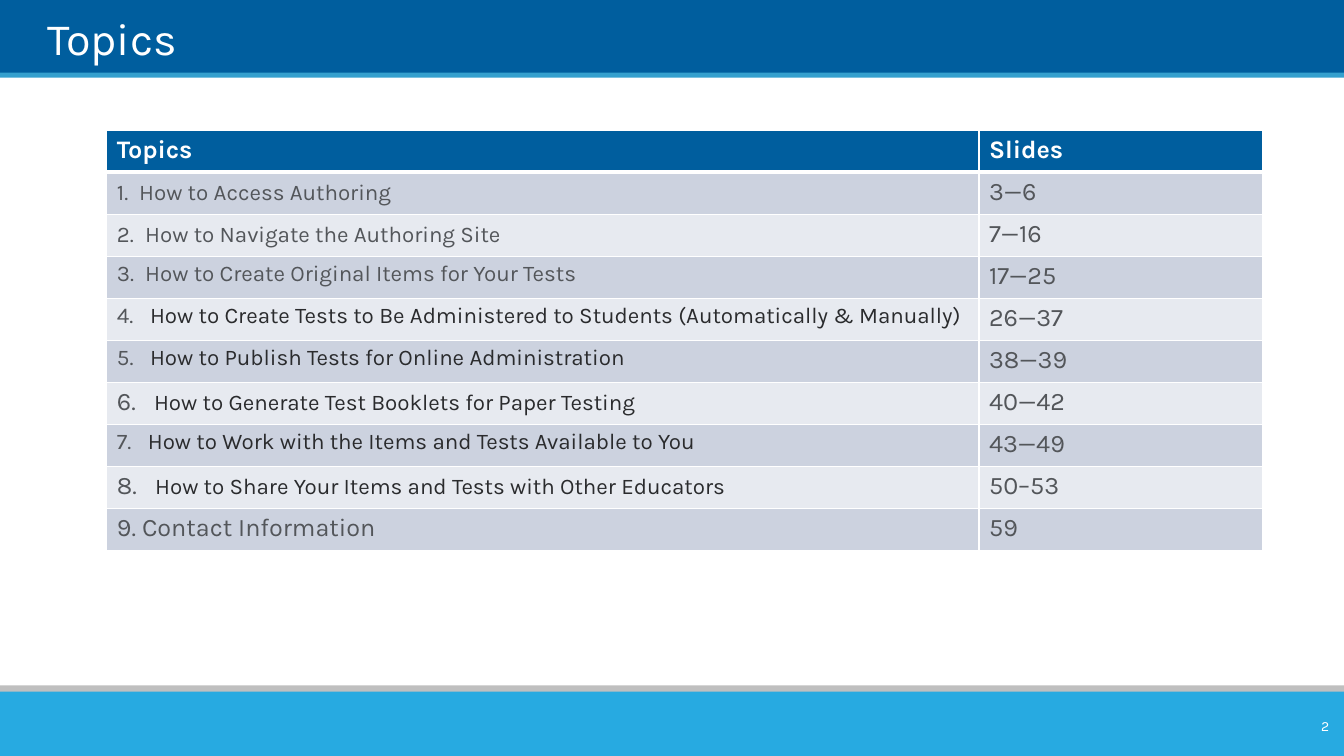
import pptx
import pptx.util
import pptx.dml.color
import pptx.enum.shapes
import pptx.enum.text
import pptx.oxml
import pptx.oxml.ns

WIDTH = pptx.util.Inches(13.33)
HEIGHT = pptx.util.Inches(7.5)
WHITE, GREY, DARK = "FFFFFF", "53565A", "2A2B2D"
NAVY = "005E9E"
STRIPES = ("CCD2DF", "E7EAF0")
MIDDLE = pptx.enum.text.MSO_ANCHOR.MIDDLE
TOP = pptx.enum.text.MSO_ANCHOR.TOP
BOTTOM = pptx.enum.text.MSO_ANCHOR.BOTTOM
LEFT = pptx.enum.text.PP_ALIGN.LEFT
RIGHT = pptx.enum.text.PP_ALIGN.RIGHT

BANDS = [
    (0, 9.87, NAVY),
    (9.6, 0.67, "35A0CE"),
    (90.67, 1.87, "BFBFBF"),
    (91.47, 8.53, "27AAE1"),
]

# number, number size, tab stop, topic, topic size, topic colour, anchor, slides
TOPICS = [
    ("1.", 16, 1.65, "How to Access Authoring", 16, GREY, MIDDLE, "3—6"),
    ("2.", 16, 2.1, "How to Navigate the Authoring Site", 16, GREY, MIDDLE, "7—16"),
    ("3.", 16, 2.1, "How to Create Original Items for Your Tests", 16, GREY, TOP, "17—25"),
    ("4.", 16, 2.46, "How to Create Tests to Be Administered to Students (Automatically & Manually)",
     16, DARK, TOP, "26—37"),
    ("5.", 16, 2.46, "How to Publish Tests for Online Administration", 16, DARK, TOP, "38—39"),
    ("6.", 18, 2.76, "How to Generate Test Booklets for Paper Testing", 16, DARK, TOP, "40—42"),
    ("7.", 16, 2.3, "How to Work with the Items and Tests Available to You", 16, DARK, TOP, "43—49"),
    ("8.", 18, 2.84, "How to Share Your Items and Tests with Other Educators", 16, DARK, TOP, "50–53"),
    ("9.", 18, None, "Contact Information", 18, GREY, TOP, "59"),
]


def across(share):
    return round(WIDTH * share / 100)


def down(share):
    return round(HEIGHT * share / 100)


def place(left, top, width, height):
    return across(left), down(top), across(width), down(height)


def paint(target, colour):
    target.solid()
    target.fore_color.rgb = pptx.dml.color.RGBColor.from_string(colour)


def write(para, text, *, size=18, colour=GREY, bold=False, align=LEFT):
    para.alignment = align
    span = para.add_run()
    span.text = text
    span.font.name = "Karla"
    span.font.size = pptx.util.Pt(size)
    span.font.bold = bold
    paint(span.font.fill, colour)


def add_band(page, top, height, colour):
    band = page.shapes.add_shape(
        pptx.enum.shapes.MSO_SHAPE.RECTANGLE, *place(0, top, 100, height))
    band.shadow.inherit = False
    band.line.fill.background()
    paint(band.fill, colour)


def add_text(page, area, text, *, anchor=MIDDLE, inset=None, **style):
    box = page.shapes.add_textbox(*place(*area))
    frame = box.text_frame
    frame.word_wrap = True
    frame.vertical_anchor = anchor
    if inset is not None:
        frame.margin_left = frame.margin_right = inset
        frame.margin_top = frame.margin_bottom = inset
    write(frame.paragraphs[0], text, **style)


def add_tab_stop(para, share):
    stops = pptx.oxml.parse_xml(
        f'<a:tabLst {pptx.oxml.ns.nsdecls("a")}>'
        f'<a:tab pos="{across(share)}" algn="l"/></a:tabLst>')
    para._p.get_or_add_pPr().append(stops)


def dress_cell(cell, colour, *, top=1, bottom=1, anchor=TOP):
    properties = cell._tc.get_or_add_tcPr()
    for side, weight in (("L", 1), ("R", 1), ("T", top), ("B", bottom)):
        properties.append(pptx.oxml.parse_xml(
            f'<a:ln{side} {pptx.oxml.ns.nsdecls("a")} w="{pptx.util.Pt(weight)}">'
            f'<a:solidFill><a:srgbClr val="{WHITE}"/></a:solidFill></a:ln{side}>'))
    paint(cell.fill, colour)
    cell.vertical_anchor = anchor
    return cell.text_frame.paragraphs[0]


def add_topics_table(page):
    table = page.shapes.add_table(
        len(TOPICS) + 1, 2, *place(7.95, 17.2, 85.97, 55.6)).table
    for column, share in zip(table.columns, (64.89, 21.08)):
        column.width = across(share)
    for column, heading in enumerate(("Topics", "Slides")):
        para = dress_cell(table.cell(0, column), NAVY, bottom=3)
        write(para, heading, colour=WHITE, bold=True)
    for row, topic in enumerate(TOPICS, start=1):
        number, number_size, stop, title, size, colour, anchor, slides = topic
        look = {"colour": STRIPES[(row - 1) % 2], "top": 3 if row == 1 else 1}
        para = dress_cell(table.cell(row, 0), anchor=anchor, **look)
        if stop:
            add_tab_stop(para, stop)
        write(para, number + ("\t" if stop else " "), size=number_size)
        write(para, title, size=size, colour=colour)
        write(dress_cell(table.cell(row, 1), **look), slides)


def main():
    deck = pptx.Presentation()
    deck.slide_width, deck.slide_height = WIDTH, HEIGHT
    page = deck.slides.add_slide(deck.slide_layouts[6])
    for band in BANDS:
        add_band(page, *band)
    add_text(page, (3.53, 0.93, 90.4, 7.6), "Topics",
             anchor=BOTTOM, inset=0, size=32, colour=WHITE)
    add_text(page, (93.85, 94, 5.78, 4), "2", size=10, colour=WHITE, align=RIGHT)
    add_topics_table(page)
    deck.save("out.pptx")


if __name__ == "__main__":
    main()
